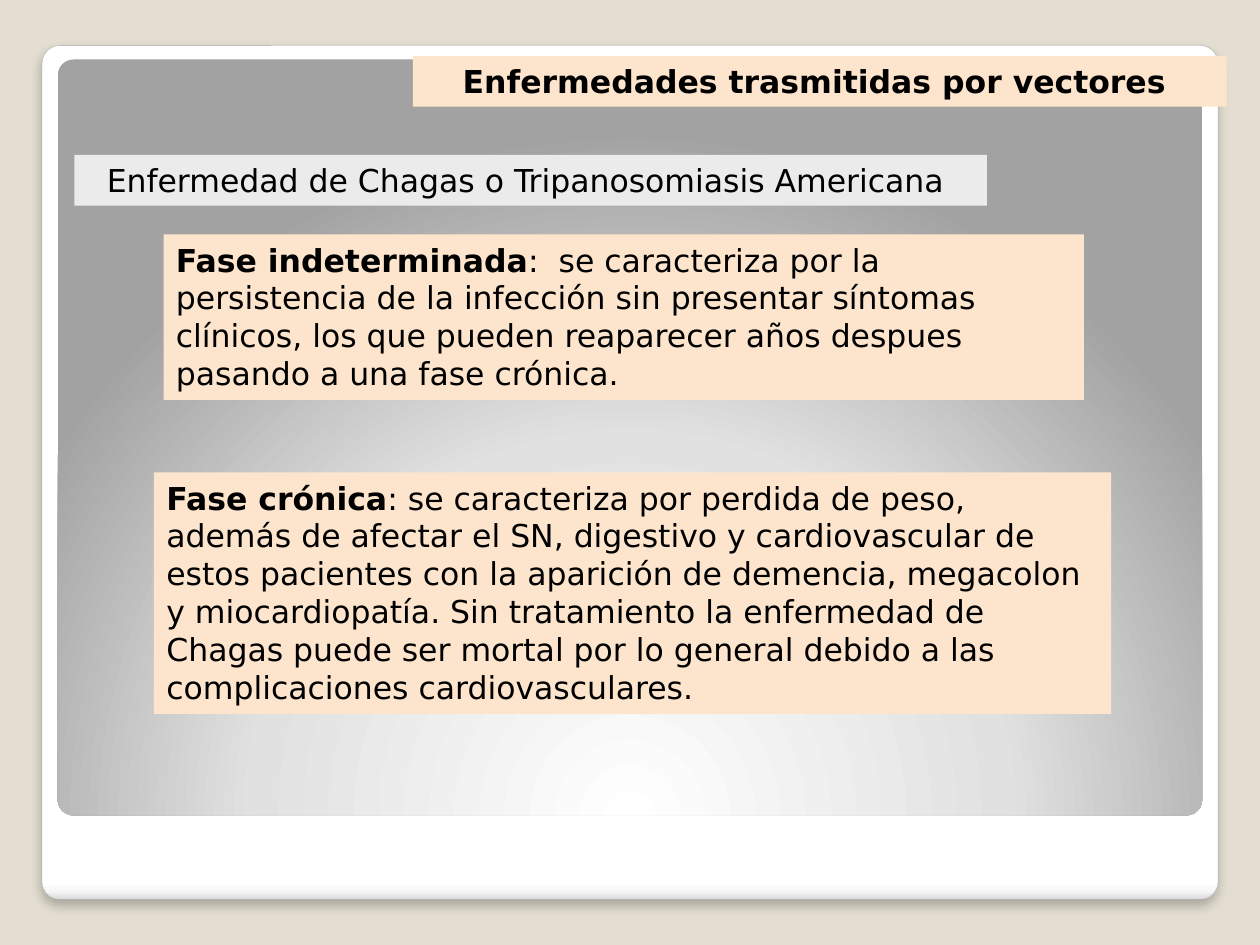
from dataclasses import dataclass
from pptx import Presentation
from pptx.dml.color import RGBColor
from pptx.enum import shapes, text
from pptx.oxml import parse_xml
from pptx.oxml.ns import nsdecls, qn
from pptx.util import Pt


@dataclass(frozen=True)
class Theme:
    back: str = "E3DED1"
    edge: str = "A4A4A4"
    peach: str = "FDE5CD"
    grey: str = "EBEBEB"
    ink: str = "000000"
    font: str = "DejaVu Sans"
    size: float = 18


@dataclass(frozen=True)
class Box:
    left: float
    top: float
    width: float
    height: float

    def place(self) -> tuple:
        return Pt(self.left), Pt(self.top), Pt(self.width), Pt(self.height)


@dataclass(frozen=True)
class Panel:
    box: Box
    stops: tuple
    shade: str


@dataclass(frozen=True)
class Label:
    box: Box
    fill: str
    runs: tuple  # (words, bold)
    align: text.PP_ALIGN = text.PP_ALIGN.LEFT


THEME = Theme()
MID = text.PP_ALIGN.CENTER

CARD = Panel(
    Box(24, 26, 672, 488),
    ((0, "FFFFFF"), (98, "FFFFFF"), (99, "F7F7F7"), (100, "DADADA")),
    '<a:lin ang="5400000" scaled="0"/>',
)
GLOW = Panel(
    Box(33, 34, 654, 432),
    ((0, "FFFFFF"), (55, "E1E1E1"), (100, "A2A2A2")),
    '<a:path path="circle"><a:fillToRect l="50000" t="175000" '
    'r="50000" b="-75000"/></a:path>',
)

LABELS = (
    Label(Box(236, 32, 465, 29), THEME.peach,
          (("Enfermedades trasmitidas por vectores ", True),), MID),
    Label(Box(42.5, 88.5, 521.5, 29), THEME.grey,
          (("Enfermedad de Chagas o Tripanosomiasis Americana ", False),), MID),
    Label(Box(93.5, 134, 526, 94.5), THEME.peach,
          (("Fase indeterminada", True),
           (":  se caracteriza por la persistencia de la infección sin "
            "presentar síntomas clínicos, los que pueden reaparecer años "
            "despues pasando a una fase crónica.", False))),
    Label(Box(88, 270, 547, 138), THEME.peach,
          (("Fase crónica", True),
           (": se caracteriza por perdida de peso, además de afectar el SN, "
            "digestivo y cardiovascular de estos pacientes con la aparición "
            "de demencia, megacolon y miocardiopatía. Sin tratamiento la "
            "enfermedad de Chagas puede ser mortal por lo general debido a "
            "las complicaciones cardiovasculares.", False))),
)


def rgb(code: str) -> RGBColor:
    return RGBColor.from_string(code)


def draw_panel(slide, panel: Panel):
    shape = slide.shapes.add_shape(
        shapes.MSO_SHAPE.ROUNDED_RECTANGLE, *panel.box.place())
    shape.adjustments[0] = 0.021
    shape.shadow.inherit = False
    shape.line.fill.background()
    shape.fill.gradient()
    stops = "".join(
        f'<a:gs pos="{pos * 1000}"><a:srgbClr val="{code}"/></a:gs>'
        for pos, code in panel.stops)
    props = shape._element.spPr
    props.replace(props.find(qn("a:gradFill")), parse_xml(
        f'<a:gradFill {nsdecls("a")} rotWithShape="1">'
        f"<a:gsLst>{stops}</a:gsLst>{panel.shade}</a:gradFill>"))
    return shape


def add_shadow(shape) -> None:
    """Cast a soft shadow straight down."""
    shape._element.spPr.find(qn("a:effectLst")).append(parse_xml(
        f'<a:outerShdw {nsdecls("a")} blurRad="{Pt(6)}" dist="{Pt(4)}" '
        f'dir="5400000" algn="t" rotWithShape="0"><a:srgbClr val="{THEME.ink}">'
        '<a:alpha val="25000"/></a:srgbClr></a:outerShdw>'))


def draw_label(slide, label: Label) -> None:
    shape = slide.shapes.add_textbox(*label.box.place())
    shape.fill.solid()
    shape.fill.fore_color.rgb = rgb(label.fill)
    frame = shape.text_frame
    frame.word_wrap = True
    frame.auto_size = text.MSO_AUTO_SIZE.SHAPE_TO_FIT_TEXT
    para = frame.paragraphs[0]
    para.alignment = label.align
    for words, bold in label.runs:
        run = para.add_run()
        run.text = words
        run.font.name = THEME.font
        run.font.size = Pt(THEME.size)
        run.font.bold = bold
        run.font.color.rgb = rgb(THEME.ink)


def main() -> None:
    deck = Presentation()
    deck.slide_width, deck.slide_height = Pt(720), Pt(540)
    slide = deck.slides.add_slide(deck.slide_layouts[6])
    back = slide.background.fill
    back.solid()
    back.fore_color.rgb = rgb(THEME.back)

    card = draw_panel(slide, CARD)
    card.line.color.rgb = rgb(THEME.edge)
    card.line.width = Pt(0.16)
    add_shadow(card)
    draw_panel(slide, GLOW)
    for label in LABELS:
        draw_label(slide, label)
    deck.save("out.pptx")


if __name__ == "__main__":
    main()
